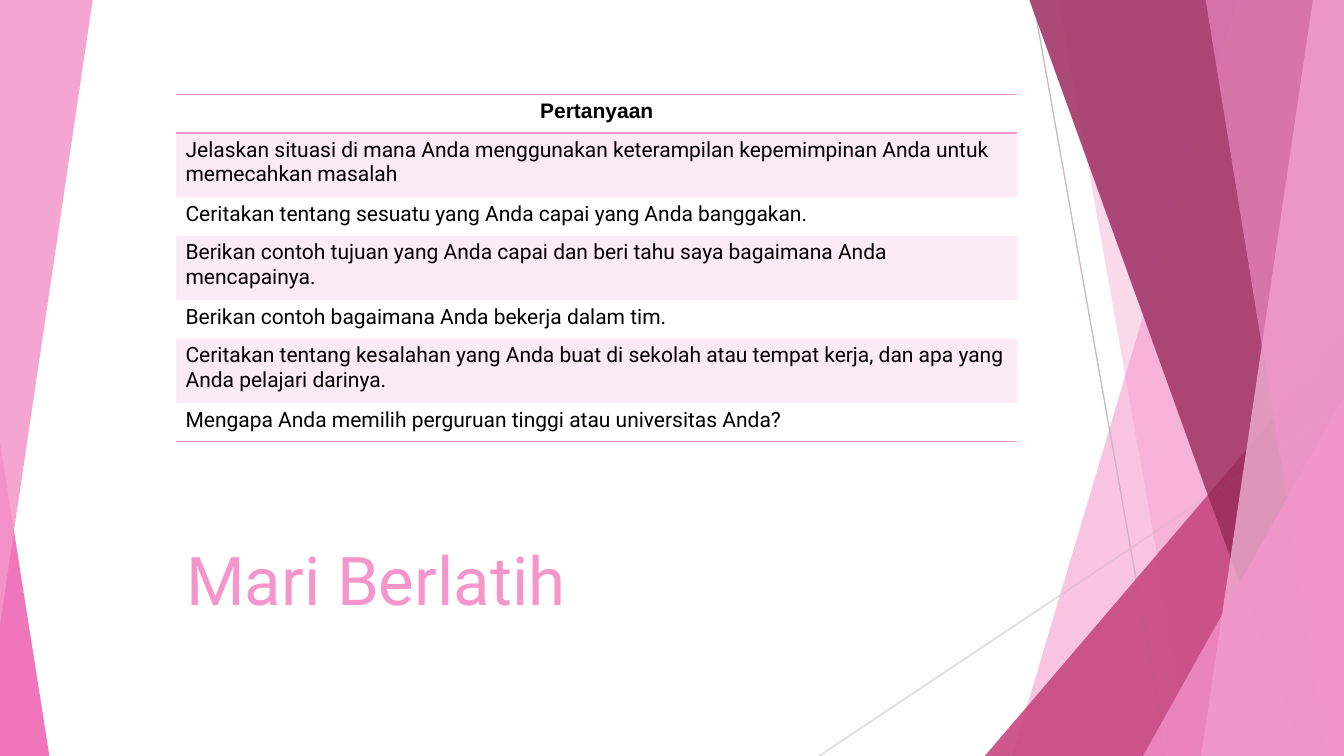
from dataclasses import dataclass

from lxml.etree import SubElement
from pptx import Presentation
from pptx.dml.color import RGBColor
from pptx.enum.shapes import MSO_CONNECTOR as Connector, MSO_SHAPE as Shape
from pptx.enum.text import MSO_ANCHOR as Anchor, PP_ALIGN as Align
from pptx.oxml import parse_xml
from pptx.oxml.ns import nsdecls, qn
from pptx.util import Pt

TITLE = "Mari Berlatih"
HEADER = "Pertanyaan"
QUESTIONS = [
    "Jelaskan situasi di mana Anda menggunakan keterampilan kepemimpinan Anda untuk memecahkan masalah",
    "Ceritakan tentang sesuatu yang Anda capai yang Anda banggakan.",
    "Berikan contoh tujuan yang Anda capai dan beri tahu saya bagaimana Anda mencapainya.",
    "Berikan contoh bagaimana Anda bekerja dalam tim.",
    "Ceritakan tentang kesalahan yang Anda buat di sekolah atau tempat kerja, dan apa yang Anda pelajari darinya.",
    "Mengapa Anda memilih perguruan tinggi atau universitas Anda?",
]


@dataclass(frozen=True)
class Theme:
    pink: str = "F496CB"
    light: str = "F8C0E0"
    hot: str = "EB3D9F"
    magenta: str = "B2136D"
    rose: str = "BC356F"
    wine: str = "8D2853"
    silver: str = "BFBFBF"
    mist: str = "D9D9D9"
    black: str = "000000"
    body_font: str = "Roboto"
    header_font: str = "Arial"
    title_size: float = 48
    table_size: float = 15


THEME = Theme()
WIDTH, HEIGHT = 960, 540
BLEED = -0.6  # ribbons start just above the page

# Each ray: start and end point
RAYS = [((738, 0), (834, HEIGHT)), ((WIDTH, 290), (585, HEIGHT))]

# Facets from back to front. Ribbon: left edge at top and bottom.
# Corner: left and top of a triangle that fills the lower right.
FACETS = [
    ("ribbon", 884.2, 722.9),
    ("ribbon", 756, 851.8),
    ("corner", 703.5, 239.8),
    ("ribbon", 735.1, 929.5),
    ("ribbon", 938.2, 858.2),
    ("ribbon", 861.1, 949),
    ("corner", 816.5, 283),
]

# Each layer: (colour, opacity) per ray, per facet, and the left-hand triangle
LAYERS = [
    {
        "rays": [(THEME.pink, 70), (THEME.pink, 70)],
        "facets": [(THEME.pink, 36), (THEME.pink, 20), (THEME.pink, 72), (THEME.hot, 50),
                   (THEME.hot, 70), (THEME.magenta, 80), (THEME.magenta, 66)],
        "left": {"place": (0, 316, 35.3, 224), "apex": 0, "turn": 0, "paint": (THEME.hot, 70)},
    },
    {
        "rays": [(THEME.silver, 100), (THEME.mist, 100)],
        "facets": [(THEME.pink, 30), (THEME.pink, 20), (THEME.rose, 72), (THEME.wine, 70),
                   (THEME.light, 70), (THEME.pink, 65), (THEME.pink, 80)],
        "left": {"place": (0, 0, 66.2, 446.4), "apex": 1, "turn": 180, "paint": (THEME.pink, 85)},
    },
]

TABLE_LEFT, TABLE_TOP, TABLE_WIDTH = 126, 67.5, 600.5
SHORT_ROW, TALL_ROW = 27.5, 46
SIDE_MARGIN, END_MARGIN = 6.6, 3.3


def set_opacity(element, percent):
    if percent < 100:
        for colour in element.iter(qn("a:srgbClr")):
            SubElement(colour, qn("a:alpha"), val=str(percent * 1000))


def paint_facet(facet, colour, opacity):
    facet.shadow.inherit = False
    facet.fill.solid()
    facet.fill.fore_color.rgb = RGBColor.from_string(colour)
    facet.line.fill.background()
    set_opacity(facet.element.spPr, opacity)


def add_ray(page, start, end, colour, opacity):
    ray = page.shapes.add_connector(
        Connector.STRAIGHT, *(Pt(value) for value in (*start, *end)))
    ray.line.width = Pt(0.75)
    ray.line.color.rgb = RGBColor.from_string(colour)
    set_opacity(ray.element.spPr, opacity)
    SubElement(ray.element.spPr, qn("a:effectLst"))


def add_ribbon(page, top_x, bottom_x):
    builder = page.shapes.build_freeform(top_x, BLEED, scale=Pt(1))
    builder.add_line_segments(
        [(WIDTH, BLEED), (WIDTH, HEIGHT), (bottom_x, HEIGHT)], close=True)
    return builder.convert_to_shape()


def add_triangle(page, place, apex, turn=0):
    triangle = page.shapes.add_shape(
        Shape.ISOSCELES_TRIANGLE, *(Pt(value) for value in place))
    triangle.adjustments[0] = apex
    triangle.rotation = turn
    return triangle


def add_layer(page, layer):
    for (start, end), paint in zip(RAYS, layer["rays"]):
        add_ray(page, start, end, *paint)
    for (kind, first, second), paint in zip(FACETS, layer["facets"]):
        if kind == "ribbon":
            facet = add_ribbon(page, first, second)
        else:
            place = (first, second, WIDTH - first, HEIGHT - second)
            facet = add_triangle(page, place, 1)
        paint_facet(facet, *paint)
    left = layer["left"]
    paint_facet(add_triangle(page, left["place"], left["apex"], left["turn"]), *left["paint"])


def write(frame, text, *, size, colour, font=THEME.body_font, bold=False, align=Align.LEFT):
    para = frame.paragraphs[0]
    para.alignment = align
    span = para.add_run()
    span.text = text
    span.font.name = font
    span.font.size = Pt(size)
    span.font.bold = bold
    span.font.color.rgb = RGBColor.from_string(colour)


def set_borders(cell, ruled_sides):
    """Rule the given sides in pink and clear the others."""
    properties = cell._tc.get_or_add_tcPr()
    for index, side in enumerate("LRTB"):
        if side in ruled_sides:
            paint = f'<a:solidFill><a:srgbClr val="{THEME.pink}"/></a:solidFill>'
        else:
            paint = "<a:noFill/>"
        border = parse_xml(f'<a:ln{side} {nsdecls("a")} w="{Pt(1)}">{paint}</a:ln{side}>')
        properties.insert(index, border)


def add_questions(page):
    texts = [HEADER, *QUESTIONS]
    heights = [TALL_ROW if row % 2 else SHORT_ROW for row in range(len(texts))]
    table = page.shapes.add_table(
        len(texts), 1, Pt(TABLE_LEFT), Pt(TABLE_TOP), Pt(TABLE_WIDTH), Pt(sum(heights))).table
    table.first_row = table.horz_banding = False
    ruled = {0: "TB", 1: "T", len(texts) - 1: "B"}
    header_format = {"font": THEME.header_font, "bold": True, "align": Align.CENTER}
    for row, (text, height) in enumerate(zip(texts, heights)):
        table.rows[row].height = Pt(height)
        cell = table.cell(row, 0)
        cell.margin_left = cell.margin_right = Pt(SIDE_MARGIN)
        cell.margin_top = cell.margin_bottom = Pt(END_MARGIN)
        write(cell.text_frame, text, size=THEME.table_size, colour=THEME.black,
              **(header_format if row == 0 else {}))
        if row % 2:
            cell.fill.solid()
            cell.fill.fore_color.rgb = RGBColor.from_string(THEME.pink)
            set_opacity(cell._tc.tcPr, 20)
        else:
            cell.fill.background()
        set_borders(cell, ruled.get(row, ""))


def add_title(page):
    box = page.shapes.add_textbox(Pt(126), Pt(360), Pt(604), Pt(85.7))
    box.text_frame.word_wrap = True
    box.text_frame.vertical_anchor = Anchor.BOTTOM
    write(box.text_frame, TITLE, size=THEME.title_size, colour=THEME.pink)


def main():
    deck = Presentation()
    deck.slide_width, deck.slide_height = Pt(WIDTH), Pt(HEIGHT)
    page = deck.slides.add_slide(deck.slide_layouts[6])
    for layer in LAYERS:
        add_layer(page, layer)
    add_title(page)
    add_questions(page)
    deck.save("out.pptx")


if __name__ == "__main__":
    main()
